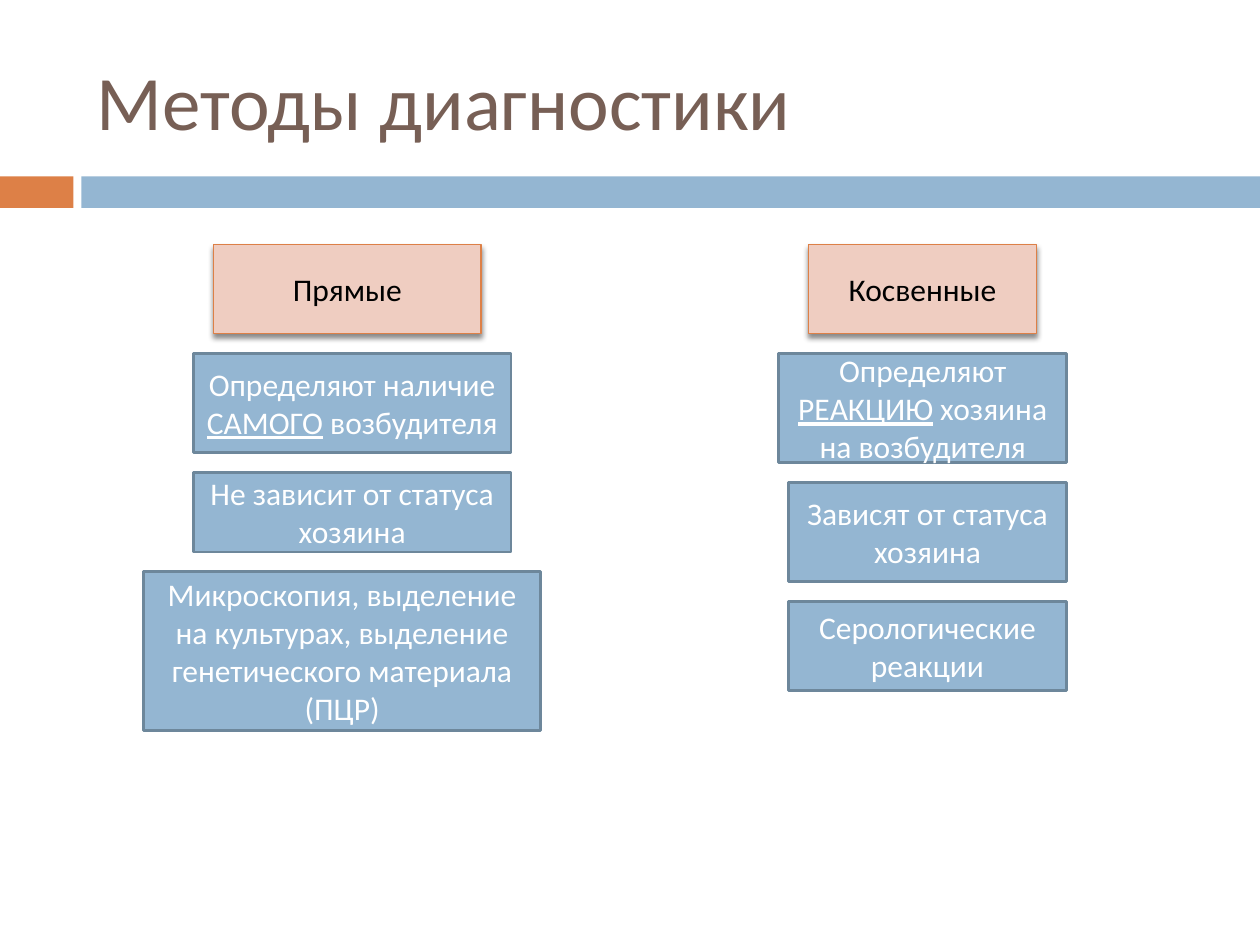
from lxml.etree import SubElement
from pptx import Presentation
from pptx.dml.color import RGBColor
from pptx.enum.shapes import MSO_SHAPE
from pptx.enum.text import MSO_ANCHOR, PP_ALIGN
from pptx.oxml.ns import qn
from pptx.util import Pt

ORANGE, BLUE, PINK = "DD8047", "94B6D2", "EFCDC1"
BLUE_EDGE, BROWN, WHITE, BLACK = "6D879B", "775F55", "FFFFFF", "000000"
TITLE = "Методы диагностики"
BANDS = [(0, 42, ORANGE), (46.5, 673.5, BLUE)]
COLUMNS = [
    [
        (["Прямые"], 122, 153, 51),
        (["Определяют наличие ", "САМОГО", " возбудителя"], 110.5, 181.5, 56.7),
        (["Не зависит от статуса хозяина"], 110.5, 181.5, 45.4),
        (["Микроскопия, выделение на культурах, выделение генетического материала (ПЦР)"],
         82, 227, 90.7),
    ],
    [
        (["Косвенные"], 462, 130.4, 51),
        (["Определяют ", "РЕАКЦИЮ", " хозяина на возбудителя"], 445, 164.5, 62.4),
        (["Зависят от статуса хозяина"], 450.5, 159, 56.7),
        (["Серологические реакции"], 450.5, 159, 51),
    ],
]
COLUMN_TOP, GAP = 139.7, 11.3


def color(value):
    return RGBColor.from_string(value)


def write_text(shape, parts, size=18, fill=WHITE, align=PP_ALIGN.CENTER):
    frame = shape.text_frame
    frame.word_wrap = True
    frame.vertical_anchor = MSO_ANCHOR.MIDDLE
    paragraph = frame.paragraphs[0]
    paragraph.alignment = align
    for index, part in enumerate(parts):
        run = paragraph.add_run()
        run.text = part
        run.font.name = "Calibri"
        run.font.size = Pt(size)
        run.font.color.rgb = color(fill)
        if index == 1:
            run.font.underline = True


def add_rectangle(slide, left, top, width, height, fill, edge=None, edge_width=1.5):
    shape = slide.shapes.add_shape(
        MSO_SHAPE.RECTANGLE, Pt(left), Pt(top), Pt(width), Pt(height))
    shape.shadow.inherit = False
    shape.fill.solid()
    shape.fill.fore_color.rgb = color(fill)
    if edge:
        shape.line.color.rgb = color(edge)
        shape.line.width = Pt(edge_width)
    else:
        shape.line.fill.background()
    return shape


def add_shadow(shape):
    effects = shape._element.spPr.find(qn("a:effectLst"))
    shadow = SubElement(effects, qn("a:outerShdw"), blurRad=str(Pt(3)),
                        dist=str(Pt(2.4)), dir="5400000", rotWithShape="0")
    shade = SubElement(shadow, qn("a:srgbClr"), val=BLACK)
    SubElement(shade, qn("a:alpha"), val="45000")


def main():
    presentation = Presentation()
    presentation.slide_width, presentation.slide_height = Pt(720), Pt(540)
    slide = presentation.slides.add_slide(presentation.slide_layouts[5])

    for left, width, fill in BANDS:
        add_rectangle(slide, left, 100.8, width, 18, fill)

    title = slide.shapes.title
    title.left, title.top, title.width, title.height = Pt(48), Pt(18), Pt(642), Pt(78)
    write_text(title, [TITLE], size=44, fill=BROWN, align=PP_ALIGN.LEFT)

    for column in COLUMNS:
        top = COLUMN_TOP
        for index, (parts, left, width, height) in enumerate(column):
            if index == 0:
                box = add_rectangle(slide, left, top, width, height, PINK, ORANGE, 0.79)
                add_shadow(box)
                write_text(box, parts, fill=BLACK)
            else:
                box = add_rectangle(slide, left, top, width, height, BLUE, BLUE_EDGE)
                write_text(box, parts)
            top += height + GAP

    presentation.save("out.pptx")


if __name__ == "__main__":
    main()
